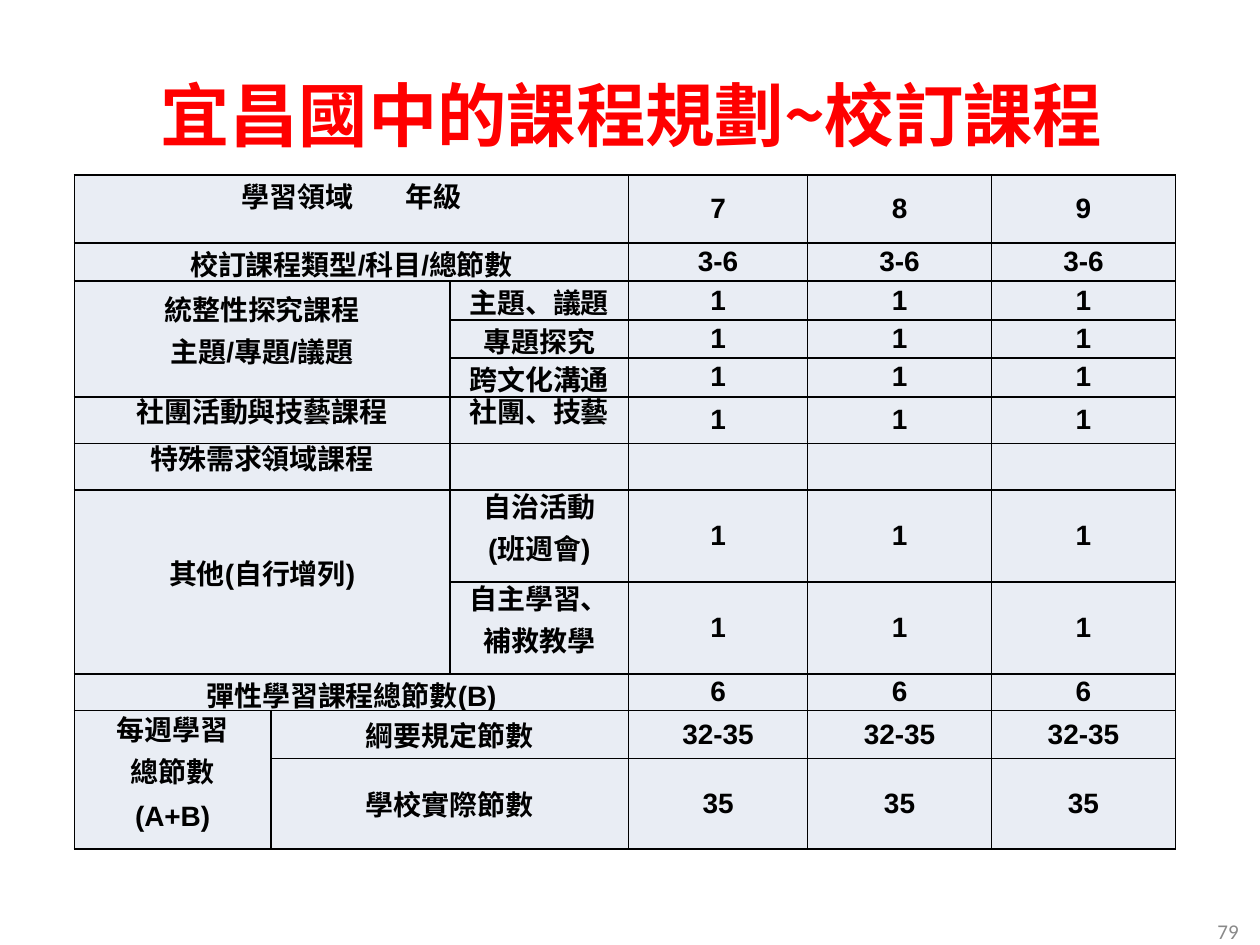
from pptx import Presentation, dml
from pptx.dml.color import RGBColor
from pptx.enum import text
from pptx.oxml import parse_xml
from pptx.oxml.ns import nsdecls
from pptx.util import Inches, Pt

COLUMN_WIDTHS = [1.56, 1.42, 1.42, 1.42, 1.46, 1.46]
ROW_HEIGHTS = [0.54, 0.3, 0.31, 0.3, 0.31, 0.37, 0.37, 0.73, 0.73, 0.29, 0.38, 0.72]
GRADE_COLUMN = 3

# Labels: row, column, rows spanned, columns spanned, lines
PLAIN_LABELS = [
    (1, 0, 1, 3, ["校訂課程類型/科目/總節數"]),
    (2, 2, 1, 1, ["主題、議題"]),
    (3, 2, 1, 1, ["專題探究"]),
    (4, 2, 1, 1, ["跨文化溝通"]),
    (9, 0, 1, 3, ["彈性學習課程總節數(B)"]),
    (10, 1, 1, 2, ["綱要規定節數"]),
    (11, 1, 1, 2, ["學校實際節數"]),
]
TIGHT_LABELS = [
    (2, 0, 3, 2, ["統整性探究課程", "主題/專題/議題"]),
    (5, 0, 1, 2, ["社團活動與技藝課程"]),
    (5, 2, 1, 1, ["社團、技藝"]),
    (6, 0, 1, 2, ["特殊需求領域課程"]),
    (7, 0, 2, 2, ["其他(自行增列)"]),
    (7, 2, 1, 1, ["自治活動", "(班週會)"]),
    (8, 2, 1, 1, ["自主學習、", "補救教學"]),
    (10, 0, 2, 1, ["每週學習", "總節數", "(A+B)"]),
]
# One value per row, the same for every grade
LESSONS = ["3-6", "1", "1", "1", "1", "", "1", "1", "6", "32-35", "35"]


def rgb(value):
    return RGBColor.from_string(value)


def style(paragraph, font_name, size, color, bold, align):
    paragraph.alignment = align
    font = paragraph.font
    font.name, font.size, font.bold = font_name, Pt(size), bold
    font.color.rgb = rgb(color)


def add_line(slide, box, words, font_name, size, color, bold, align):
    frame = slide.shapes.add_textbox(*map(Inches, box)).text_frame
    frame.word_wrap = True
    frame.vertical_anchor = text.MSO_ANCHOR.MIDDLE
    frame.text = words
    style(frame.paragraphs[0], font_name, size, color, bold, align)


def format_cell(cell):
    cell.margin_left = cell.margin_right = Inches(0.01)
    cell.margin_top = cell.margin_bottom = 0
    cell.vertical_anchor = text.MSO_ANCHOR.MIDDLE
    properties = cell._tc.get_or_add_tcPr()
    for side in "LRTB":
        properties.append(parse_xml(
            f'<a:ln{side} {nsdecls("a")} w="12700"><a:solidFill>'
            f'<a:srgbClr val="000000"/></a:solidFill></a:ln{side}>'))
    cell.fill.solid()
    cell.fill.fore_color.rgb = rgb("E9EDF4")


def write_cell(cell, lines, tight=False):
    frame = cell.text_frame
    frame.text = "\n".join(lines)
    for index, paragraph in enumerate(frame.paragraphs):
        if tight:
            paragraph.line_spacing = Pt(12)
            if index:
                paragraph.space_before = Pt(12)
        style(paragraph, "Arial", 16, "000000", True, text.PP_ALIGN.CENTER)


def write_corner(cell):
    """Area and grade headings, parted by one widened space."""
    write_cell(cell, [""])
    cell.vertical_anchor = text.MSO_ANCHOR.TOP
    paragraph = cell.text_frame.paragraphs[0]
    for words in ("學習領域", " ", "年級"):
        run = paragraph.add_run()
        run.text = words
        if words == " ":
            run.font._element.set("spc", "2600")


def add_curriculum_table(slide, box):
    table = slide.shapes.add_table(
        len(ROW_HEIGHTS), len(COLUMN_WIDTHS), *map(Inches, box)).table
    for column, width in zip(table.columns, COLUMN_WIDTHS):
        column.width = Inches(width)
    for row, height in zip(table.rows, ROW_HEIGHTS):
        row.height = Inches(height)
    for cell in table.iter_cells():
        format_cell(cell)

    # Heading row
    table.cell(0, 0).merge(table.cell(0, 2))
    write_corner(table.cell(0, 0))

    # Course labels
    for labels, tight in ((PLAIN_LABELS, False), (TIGHT_LABELS, True)):
        for row, column, rows, columns, lines in labels:
            cell = table.cell(row, column)
            if rows * columns > 1:
                cell.merge(table.cell(row + rows - 1, column + columns - 1))
            write_cell(cell, lines, tight)

    # Grades and their lessons
    for offset, grade in enumerate("789"):
        for row, value in enumerate([grade] + LESSONS):
            write_cell(table.cell(row, GRADE_COLUMN + offset), [value])


def main():
    deck = Presentation()
    deck.slide_width, deck.slide_height = Inches(10), Inches(7.5)
    slide = deck.slides.add_slide(deck.slide_layouts[6])
    add_line(slide, (0.51, 0.52, 9, 0.77), "宜昌國中的課程規劃~校訂課程",
             "Noto Sans CJK SC", 39.6, "FF0000", True, text.PP_ALIGN.CENTER)
    add_curriculum_table(slide, (0.59, 1.39, 8.74, 5.36))
    # Page number
    add_line(slide, (7.6, 7.19, 2.33, 0.4), "79",
             "Calibri", 12, "898989", False, text.PP_ALIGN.RIGHT)
    deck.save("out.pptx")


if __name__ == "__main__":
    main()
